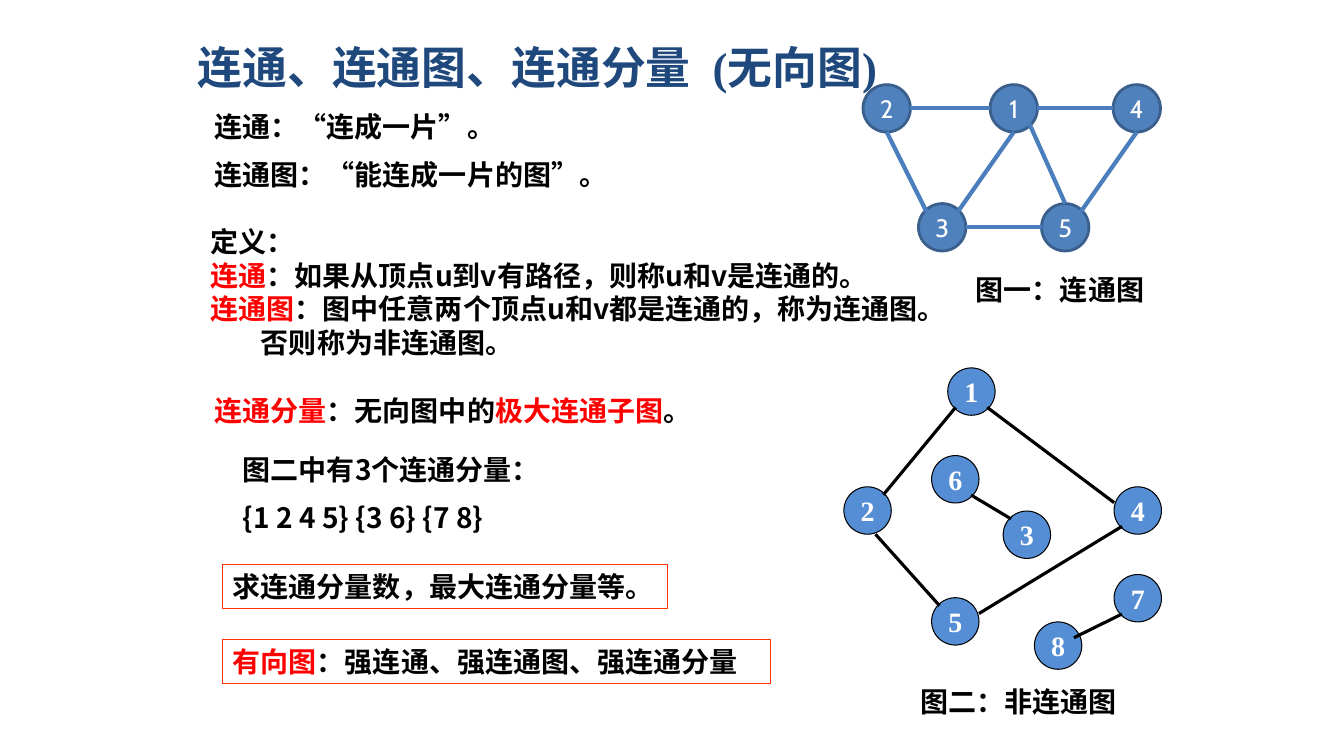
import dataclasses

import pptx
import pptx.dml.color
import pptx.enum.shapes
import pptx.enum.text
import pptx.util
from lxml import etree

Inches = pptx.util.Inches
Pt = pptx.util.Pt
Align = pptx.enum.text.PP_ALIGN
Anchor = pptx.enum.text.MSO_ANCHOR


@dataclasses.dataclass
class Theme:
    title_color: str = "1F497D"
    text_color: str = "000000"
    accent: str = "FF0000"
    frame: str = "FF3300"
    white: str = "FFFFFF"
    title_size: int = 32
    body_size: int = 20
    node_size: int = 18
    serif: str = "Times New Roman"
    sans: str = "Noto Sans CJK SC"
    node_font: str = "Cabin"


theme = Theme()


def rgb(value):
    return pptx.dml.color.RGBColor.from_string(value)


def add_span(para, text, size, color, font, bold=True):
    span = para.add_run()
    span.text = text
    span.font.size = Pt(size)
    span.font.bold = bold
    span.font.name = font
    span.font.color.rgb = rgb(color)
    east_asian = etree.SubElement(span.font._element, pptx.oxml.ns.qn("a:ea"))
    east_asian.set("typeface", theme.sans)
    return span


deck = pptx.Presentation()
deck.slide_width = Inches(13.33)
deck.slide_height = Inches(7.5)
page = deck.slides.add_slide(deck.slide_layouts[5])

title = page.shapes.title
title.left, title.top = Inches(1.86), Inches(0.3)
title.width, title.height = Inches(9), Inches(0.73)
title.text_frame.vertical_anchor = Anchor.MIDDLE
title_para = title.text_frame.paragraphs[0]
title_para.alignment = Align.LEFT
title_para.line_spacing = Pt(38.4)
for text, tracking in [("连通、连通图、连通分量", 0), (" ", 800), ("(无向图)", 0)]:
    span = add_span(title_para, text, theme.title_size, theme.title_color, theme.serif)
    if tracking:
        span.font._element.set("spc", str(tracking))

black, red = theme.text_color, theme.accent
text_boxes = [
    (2.03, 1.04, 6.1, 0.94, theme.serif, 10, False,
     [[("连通：“连成一片”。", black)], [("连通图：“能连成一片的图”。", black)]]),
    (1.99, 2.18, 7.46, 1.77, theme.sans, 0, False,
     [[("定义：", black)],
      [("连通", red), ("：如果从顶点u到v有路径，则称u和v是连通的。", black)],
      [("连通图", red), ("：图中任意两个顶点u和v都是连通的，称为连通图。", black)],
      [("否则称为非连通图。", black)]]),
    (2.03, 3.85, 5.2, 0.44, theme.serif, 0, False,
     [[("连通分量", red), ("：无向图中的", black), ("极大连通子图", red), ("。", black)]]),
    (2.31, 4.44, 4.96, 0.94, theme.sans, 10, False,
     [[("图二中有3个连通分量：", black)], [("{1 2 4 5} {3 6} {7 8}", black)]]),
    (2.21, 5.6, 4.41, 0.44, theme.serif, 0, True,
     [[("求连通分量数，最大连通分量等。", black)]]),
    (2.21, 6.34, 5.43, 0.44, theme.serif, 0, True,
     [[("有向图", red), ("：强连通、强连通图、强连通分量", black)]]),
    (9.58, 2.65, 2.01, 0.44, theme.serif, 0, False, [[("图一：连通图", black)]]),
    (9.03, 6.74, 2.28, 0.44, theme.serif, 0, False, [[("图二：非连通图", black)]]),
]
for left, top, width, height, font, gap, framed, paragraphs in text_boxes:
    box = page.shapes.add_textbox(Inches(left), Inches(top), Inches(width), Inches(height))
    box.text_frame.word_wrap = True
    if framed:
        box.line.color.rgb = rgb(theme.frame)
        box.line.width = Pt(0.75)
    for index, spans in enumerate(paragraphs):
        para = box.text_frame.paragraphs[0] if index == 0 else box.text_frame.add_paragraph()
        para.line_spacing = Pt(24)
        if index and gap:
            para.space_before = Pt(gap)
        if spans[0][0].startswith("否则"):
            para._p.get_or_add_pPr().set("marL", str(Inches(0.5)))
        for text, color in spans:
            add_span(para, text, theme.body_size, color, font)

# Edge ends are given in sixths of the node box.
connected = dict(
    nodes={"2": (8.56, 0.84), "1": (9.82, 0.84), "4": (11.04, 0.84),
           "3": (9.11, 2.02), "5": (10.33, 2.02)},
    edges=[("2", 3, 6, "3", 1, 1), ("2", 6, 3, "1", 0, 3), ("1", 6, 3, "4", 0, 3),
           ("1", 3, 6, "3", 5, 1), ("1", 5, 5, "5", 3, 0), ("4", 3, 6, "5", 5, 1),
           ("3", 6, 3, "5", 0, 3)],
    fill="4F81BD", outline="3A5F8C", outline_width=2, edge="4B7EBC", edge_width=3,
    font=theme.node_font, size=theme.node_size, bold=False)
disconnected = dict(
    nodes={"1": (9.4, 3.65), "2": (8.37, 4.83), "5": (9.24, 5.93), "3": (9.95, 5.07),
           "4": (11.05, 4.83), "6": (9.24, 4.52), "7": (11.05, 5.7), "8": (10.26, 6.17)},
    edges=[("1", 1, 5, "2", 5, 1), ("2", 4, 6, "5", 1, 1), ("6", 5, 5, "3", 1, 1),
           ("1", 5, 5, "4", 0, 2), ("5", 6, 2, "4", 1, 5), ("8", 5, 2, "7", 1, 5)],
    fill="558ED5", outline="000000", outline_width=0.75, edge="000000", edge_width=2.25,
    font=theme.serif, size=theme.body_size, bold=True)
diameter = 0.47

for graph in (connected, disconnected):
    for label, (left, top) in graph["nodes"].items():
        node = page.shapes.add_shape(
            pptx.enum.shapes.MSO_SHAPE.OVAL,
            Inches(left), Inches(top), Inches(diameter), Inches(diameter))
        node.shadow.inherit = False
        node.fill.solid()
        node.fill.fore_color.rgb = rgb(graph["fill"])
        node.line.color.rgb = rgb(graph["outline"])
        node.line.width = Pt(graph["outline_width"])
        frame = node.text_frame
        frame.word_wrap = False
        frame.vertical_anchor = Anchor.MIDDLE
        frame.margin_left = frame.margin_right = frame.margin_top = frame.margin_bottom = 0
        para = frame.paragraphs[0]
        para.alignment = Align.CENTER
        add_span(para, label, graph["size"], theme.white, graph["font"], graph["bold"])
    for start, start_x, start_y, end, end_x, end_y in graph["edges"]:
        start_left, start_top = graph["nodes"][start]
        end_left, end_top = graph["nodes"][end]
        edge = page.shapes.add_connector(
            pptx.enum.shapes.MSO_CONNECTOR.STRAIGHT,
            Inches(start_left + diameter * start_x / 6), Inches(start_top + diameter * start_y / 6),
            Inches(end_left + diameter * end_x / 6), Inches(end_top + diameter * end_y / 6))
        edge.line.color.rgb = rgb(graph["edge"])
        edge.line.width = Pt(graph["edge_width"])
        etree.SubElement(edge._element.spPr, pptx.oxml.ns.qn("a:effectLst"))

deck.save("out.pptx")
